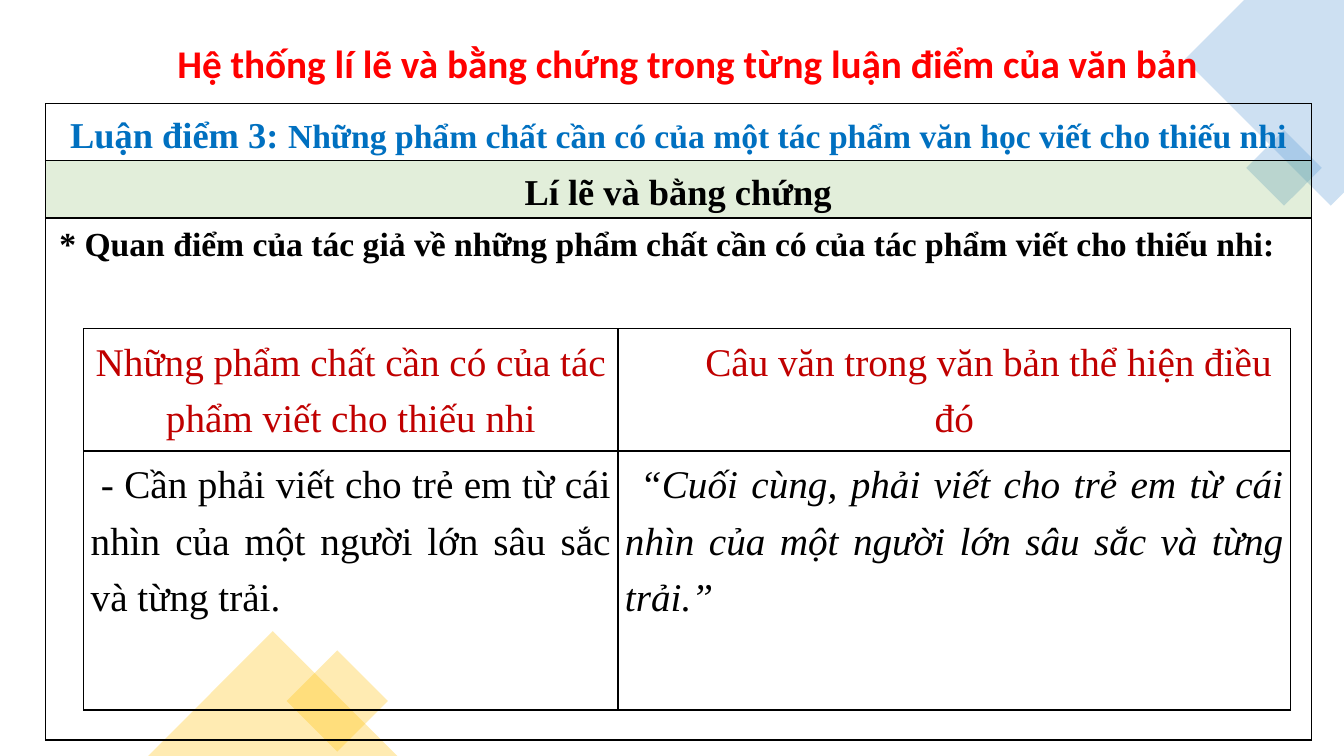
from dataclasses import dataclass
from typing import Optional

from lxml.etree import SubElement
from pptx import Presentation
from pptx.dml.color import RGBColor
from pptx.enum.shapes import MSO_SHAPE as Preset
from pptx.enum.text import PP_ALIGN as Align
from pptx.oxml.ns import qn
from pptx.util import Emu, Inches, Pt


@dataclass(frozen=True)
class Theme:
    sans: str = "Calibri"
    serif: str = "Times New Roman"
    black: str = "000000"
    red: str = "FF0000"
    crimson: str = "C00000"
    heading_blue: str = "0070C0"
    blue: str = "5B9BD5"
    gold: str = "FFC000"
    green: str = "70AD47"
    large: int = 28
    medium: int = 26
    small: int = 24
    border: int = 1
    leading: float = 1.3
    decor_opacity: int = 30
    band_opacity: int = 20


THEME = Theme()
WIDTH, HEIGHT = Inches(13.33), Inches(7.5)


def across(percent: float) -> Emu:
    return Emu(round(WIDTH * percent / 100))


def down(percent: float) -> Emu:
    return Emu(round(HEIGHT * percent / 100))


@dataclass(frozen=True)
class Area:
    left: float
    top: float
    width: float
    height: float

    def lengths(self) -> tuple:
        return across(self.left), down(self.top), across(self.width), down(self.height)


@dataclass(frozen=True)
class Span:
    text: str
    size: int


@dataclass(frozen=True)
class Copy:
    spans: tuple[Span, ...]
    color: str = THEME.black
    font: str = THEME.serif
    bold: bool = False
    italic: bool = False
    align: Align = Align.CENTER
    leading: float = THEME.leading
    after: int = 0
    indent: float = 0


@dataclass(frozen=True)
class Cell:
    copy: Optional[Copy] = None
    band: Optional[str] = None


@dataclass(frozen=True)
class Grid:
    left: float
    top: float
    columns: tuple[float, ...]
    rows: tuple[float, ...]
    inset: float
    cells: tuple[tuple[Cell, ...], ...]


@dataclass(frozen=True)
class Decor:
    preset: Preset
    area: Area
    color: str
    rotation: int = 0


BLUE_CORNER = ((100, 0), (92.57, 0), (88.15, 7.87), (99.02, 27.2), (100, 25.47))

DECOR = (
    Decor(Preset.RECTANGLE, Area(93.55, 18.67, 3.98, 7.07), THEME.blue, 315),
    Decor(Preset.RECTANGLE, Area(22.43, 88, 5.33, 9.47), THEME.gold, 45),
    Decor(Preset.ISOSCELES_TRIANGLE, Area(11.03, 83.47, 18.53, 16.53), THEME.gold),
)

TITLE = Copy(
    (Span("Hệ thống lí lẽ và bằng chứng trong từng luận điểm của văn bản", THEME.large),),
    THEME.red, THEME.sans, bold=True, after=10,
)
VIEWPOINT = Copy(
    (Span("* Quan điểm của tác giả về những phẩm chất cần có của tác phẩm viết cho thiếu nhi:",
          THEME.small),),
    bold=True, align=Align.LEFT, leading=1,
)

ARGUMENT = Grid(
    3.38, 13.73, (94.2,), (7.55, 7.55, 69.07), 0.03,
    (
        (Cell(Copy(
            (Span("Luận điểm 3: ", THEME.medium),
             Span("Những phẩm chất cần có của một tác phẩm văn học viết cho thiếu nhi",
                  THEME.small)),
            THEME.heading_blue, bold=True, after=8)),),
        (Cell(Copy((Span("Lí lẽ và bằng chứng", THEME.medium),), bold=True, after=8),
              THEME.green),),
        (Cell(),),
    ),
)

EVIDENCE = Grid(
    6.23, 43.47, (39.75, 50.05), (16.13, 34.27), 0.07,
    (
        (Cell(Copy((Span("Những phẩm chất cần có của tác phẩm viết cho thiếu nhi", THEME.large),),
                   THEME.crimson, after=10)),
         Cell(Copy((Span("Câu văn trong văn bản thể hiện điều đó", THEME.large),),
                   THEME.crimson, after=10, indent=0.68))),
        (Cell(Copy((Span("- Cần phải viết cho trẻ em từ cái nhìn của một người lớn sâu sắc "
                         "và từng trải.", THEME.large),),
                   align=Align.JUSTIFY, after=10, indent=0.1)),
         Cell(Copy((Span("“Cuối cùng, phải viết cho trẻ em từ cái nhìn của một người lớn "
                         "sâu sắc và từng trải.”", THEME.large),),
                   italic=True, align=Align.JUSTIFY, indent=0.15))),
    ),
)


def paint(fill, properties, color: str, opacity: int) -> None:
    fill.solid()
    fill.fore_color.rgb = RGBColor.from_string(color)
    tint = properties.find(qn("a:solidFill"))[0]
    SubElement(tint, qn("a:alpha"), val=str(opacity * 1000))


def finish_decor(shape, color: str) -> None:
    shape.shadow.inherit = False
    shape.line.fill.background()
    paint(shape.fill, shape.element.spPr, color, THEME.decor_opacity)


def draw_corner(page) -> None:
    points = [(across(x), down(y)) for x, y in BLUE_CORNER]
    builder = page.shapes.build_freeform(*points[0])
    builder.add_line_segments(points[1:], close=True)
    finish_decor(builder.convert_to_shape(), THEME.blue)


def draw_decor(page, decor: Decor) -> None:
    shape = page.shapes.add_shape(decor.preset, *decor.area.lengths())
    shape.rotation = decor.rotation
    finish_decor(shape, decor.color)


def write(frame, copy: Copy) -> None:
    frame.word_wrap = True
    para = frame.paragraphs[0]
    para.alignment = copy.align
    para.line_spacing = copy.leading
    para.space_after = Pt(copy.after)
    if copy.indent:
        para._p.get_or_add_pPr().set("indent", str(Inches(copy.indent)))
    font = para.font
    font.name, font.bold, font.italic = copy.font, copy.bold, copy.italic
    font.color.rgb = RGBColor.from_string(copy.color)
    if len(copy.spans) == 1:
        font.size = Pt(copy.spans[0].size)
    for span in copy.spans:
        run = para.add_run()
        run.text = span.text
        if len(copy.spans) > 1:
            run.font.size = Pt(span.size)


def draw_text(page, area: Area, copy: Copy) -> None:
    write(page.shapes.add_textbox(*area.lengths()).text_frame, copy)


def draw_borders(properties) -> None:
    for side in ("L", "R", "T", "B"):
        line = SubElement(properties, qn(f"a:ln{side}"), w=str(Pt(THEME.border)))
        SubElement(SubElement(line, qn("a:solidFill")), qn("a:srgbClr"), val=THEME.black)


def draw_grid(page, grid: Grid) -> None:
    area = Area(grid.left, grid.top, sum(grid.columns), sum(grid.rows))
    table = page.shapes.add_table(len(grid.rows), len(grid.columns), *area.lengths()).table
    table.first_row = table.horz_banding = False
    for column, share in zip(table.columns, grid.columns):
        column.width = across(share)
    for row, share, cells in zip(table.rows, grid.rows, grid.cells):
        row.height = down(share)
        for box, cell in zip(row.cells, cells):
            box.margin_left = box.margin_right = Inches(grid.inset)
            box.margin_top = box.margin_bottom = 0
            properties = box._tc.get_or_add_tcPr()
            draw_borders(properties)
            if cell.band:
                paint(box.fill, properties, cell.band, THEME.band_opacity)
            else:
                box.fill.background()
            if cell.copy:
                write(box.text_frame, cell.copy)


def main() -> None:
    deck = Presentation()
    deck.slide_width, deck.slide_height = WIDTH, HEIGHT
    page = deck.slides.add_slide(deck.slide_layouts[6])
    draw_corner(page)
    for decor in DECOR:
        draw_decor(page, decor)
    draw_text(page, Area(6.68, 2.67, 88.9, 8.8), TITLE)
    draw_grid(page, ARGUMENT)
    draw_text(page, Area(3.68, 28.8, 92.7, 6.67), VIEWPOINT)
    draw_grid(page, EVIDENCE)
    deck.save("out.pptx")


if __name__ == "__main__":
    main()
